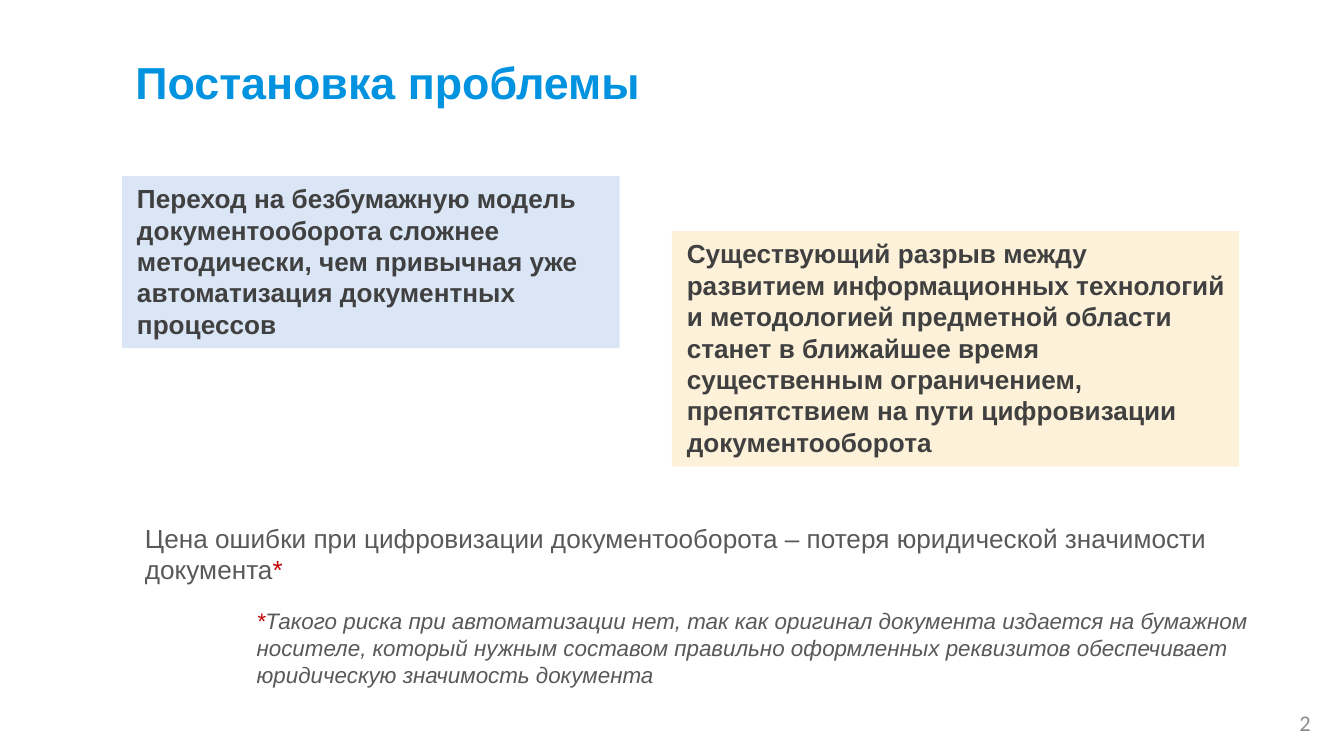
from typing import NamedTuple

from pptx import Presentation
from pptx.dml.color import RGBColor as Rgb
from pptx.enum.shapes import MSO_SHAPE as Form
from pptx.enum.text import MSO_ANCHOR as Anchor, PP_ALIGN as Align
from pptx.util import Cm, Pt


class Run(NamedTuple):
    text: str
    size: float
    tint: str
    style: dict = {}


class Para(NamedTuple):
    runs: list
    indent: float = 0
    format: dict = {}


class Box(NamedTuple):
    left: float
    top: float
    width: float
    height: float
    paras: list
    fill: str = ""
    anchor: Anchor = Anchor.TOP


BLUE, RED = "0293E0", "C00000"
DARK, GREY, PALE = "404040", "595959", "8C8C8C"
BOLD = {"bold": True}
SLANT = {"italic": True}
GAP = {"space_after": Pt(6)}

PRICE = "Цена ошибки при цифровизации документооборота – потеря юридической значимости документа"
RISK = (
    "Такого риска при автоматизации нет, так как оригинал документа издается на бумажном "
    "носителе, который нужным составом правильно оформленных реквизитов обеспечивает "
    "юридическую значимость документа"
)
MODEL = (
    "Переход на безбумажную модель документооборота сложнее методически, "
    "чем привычная уже автоматизация документных процессов"
)
BREACH = (
    "Существующий разрыв между развитием информационных технологий и методологией "
    "предметной области станет в ближайшее время существенным ограничением, "
    "препятствием на пути цифровизации документооборота"
)


def paint(target, tint: str) -> None:
    target.rgb = Rgb.from_string(tint)


def assign(target, values: dict) -> None:
    for name, value in values.items():
        setattr(target, name, value)


def write(line, para: Para) -> None:
    assign(line, {"alignment": Align.LEFT, **para.format})
    if para.indent:
        props = line._p.get_or_add_pPr()
        props.set("marL", str(Cm(para.indent)))
        props.set("indent", "0")
    for item in para.runs:
        run = line.add_run()
        run.text = item.text
        assign(run.font, {"name": "Arial", "size": Pt(item.size), **item.style})
        paint(run.font.color, item.tint)


def draw(slide, box: Box) -> None:
    place = [Cm(side) for side in box[:4]]
    if box.fill:
        shape = slide.shapes.add_shape(Form.RECTANGLE, *place)
        shape.shadow.inherit = False
        shape.fill.solid()
        paint(shape.fill.fore_color, box.fill)
        shape.line.fill.background()
    else:
        shape = slide.shapes.add_textbox(*place)
    frame = shape.text_frame
    assign(frame, {"word_wrap": True, "vertical_anchor": box.anchor})
    for spot, para in enumerate(box.paras):
        line = frame.add_paragraph() if spot else frame.paragraphs[0]
        write(line, para)


def main() -> None:
    deck = Presentation()
    assign(deck, {"slide_width": Cm(25.4), "slide_height": Cm(14.29)})
    slide = deck.slides.add_slide(deck.slide_layouts[6])
    boxes = [
        Box(19.1, 13.28, 5.92, 0.76,
            [Para([Run("2", 12, PALE, {"name": "Calibri"})], 0, {"alignment": Align.RIGHT})],
            anchor=Anchor.MIDDLE),
        Box(2.31, 3.33, 9.4, 3.25, [Para([Run(MODEL, 14, DARK, BOLD)], 0.03)], "DAE6F6"),
        Box(2.31, 0.91, 23.09, 1.27,
            [Para([Run("Постановка проблемы", 24, BLUE, BOLD)])], "FFFFFF"),
        Box(0, 9.75, 23.9, 3.43, [
            Para([Run(PRICE, 14, GREY), Run("*", 14, RED)], 2.49, GAP),
            Para([Run("*", 12, RED, SLANT), Run(RISK, 12, GREY, SLANT)], 4.6,
                 {"space_before": Pt(6), **GAP}),
        ]),
        Box(12.7, 4.37, 10.72, 4.45, [Para([Run(BREACH, 14, DARK, BOLD)], 0.03)], "FDF2D9"),
    ]
    for box in boxes:
        draw(slide, box)
    deck.save("out.pptx")


if __name__ == "__main__":
    main()
